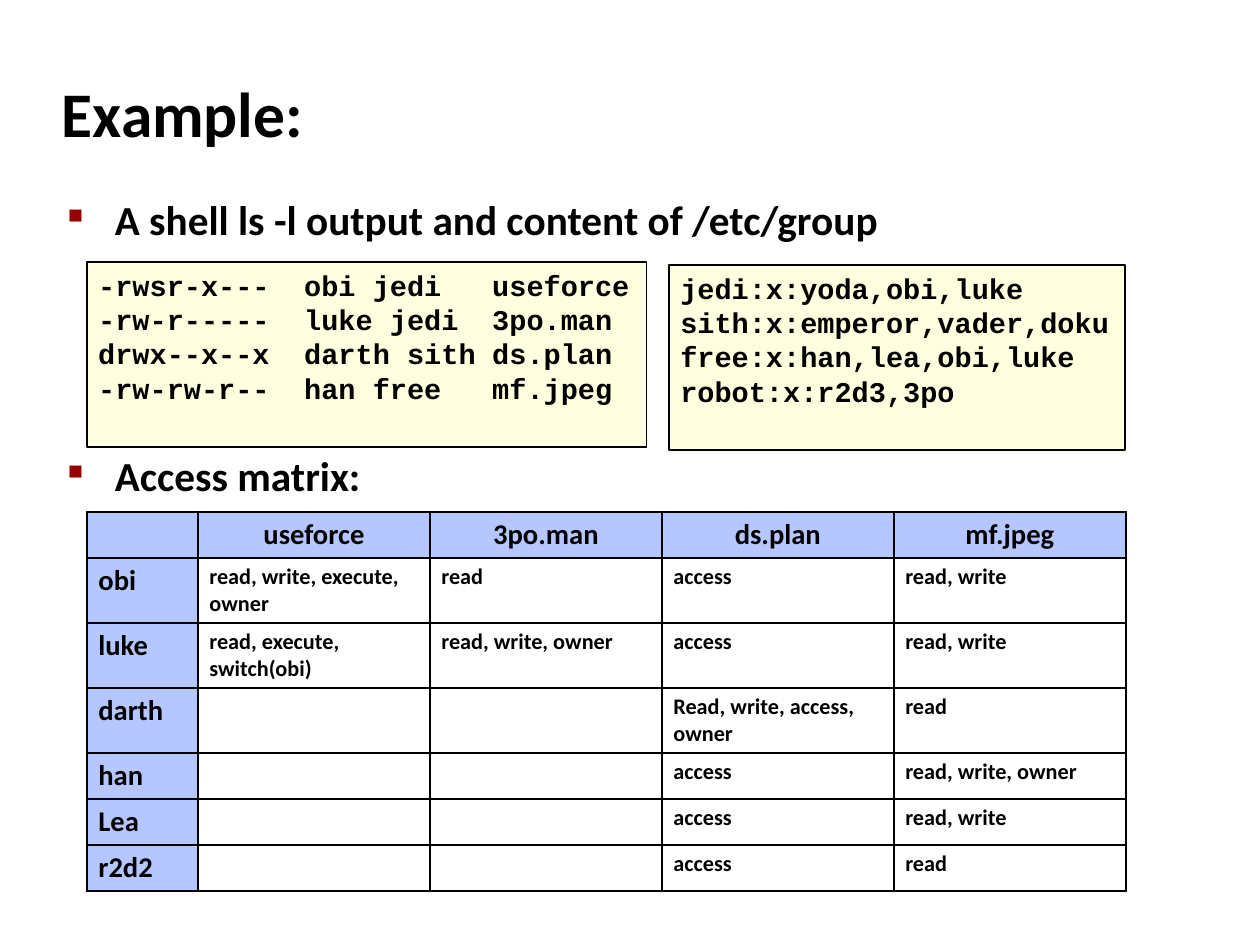
from dataclasses import dataclass

from lxml.etree import SubElement
from pptx import Presentation
from pptx.dml.color import RGBColor as RGB
from pptx.enum.shapes import MSO_SHAPE as Shape
from pptx.enum.text import MSO_ANCHOR as Anchor, PP_ALIGN as Align
from pptx.oxml import parse_xml
from pptx.oxml.ns import nsdecls, qn
from pptx.util import Pt


@dataclass(frozen=True)
class Theme:
    ink: str = "000000"
    paper: str = "FFFFFF"
    code_fill: str = "FEFFDE"
    head_fill: str = "B6C7FF"
    bullet: str = "990000"
    body_font: str = "Calibri"
    code_font: str = "Courier New"
    title_size: int = 40
    body_size: int = 26
    label_size: int = 18
    cell_size: int = 14


THEME = Theme()
EMU_PER_PX = 8000

LISTING = [
    "-rwsr-x---\tobi jedi\tuseforce",
    "-rw-r-----\tluke jedi\t3po.man",
    "drwx--x--x\tdarth sith\tds.plan",
    "-rw-rw-r--\than free\tmf.jpeg",
]
GROUPS = [
    "jedi:x:yoda,obi,luke",
    "sith:x:emperor,vader,doku",
    "free:x:han,lea,obi,luke",
    "robot:x:r2d3,3po",
]
MATRIX = [
    ["", "useforce", "3po.man", "ds.plan", "mf.jpeg"],
    ["obi", "read, write, execute,\vowner", "read", "access", "read, write"],
    ["luke", "read, execute, switch(obi)", "read, write, owner", "access", "read, write"],
    ["darth", "", "", "Read, write, access, owner", "read"],
    ["han", "", "", "access", "read, write, owner"],
    ["Lea", "", "", "access", "read, write"],
    ["r2d2", "", "", "access", "read"],
]


def px(n):
    return n * EMU_PER_PX


def write(tf, lines, size, font=THEME.body_font, align=Align.LEFT, gap=0):
    for i, line in enumerate(lines):
        p = tf.paragraphs[0] if i == 0 else tf.add_paragraph()
        p.text = line
        p.alignment = align
        p.space_before = Pt(gap if i else 0)
        for r in p.runs:
            r.font.name = font
            r.font.size = Pt(size)
            r.font.bold = True
            r.font.color.rgb = RGB.from_string(THEME.ink)


def text_box(s, box, lines, size, anchor=Anchor.TOP, gap=0):
    tf = s.shapes.add_textbox(*map(px, box)).text_frame
    tf.word_wrap = True
    tf.vertical_anchor = anchor
    tf.margin_left = tf.margin_right = px(13)
    tf.margin_top = tf.margin_bottom = px(7)
    write(tf, lines, size, gap=gap)
    return tf


def bullet_list(s, box, lines, gap):
    tf = text_box(s, box, lines, THEME.body_size, gap=gap)
    for p in tf.paragraphs:
        pPr = p._p.get_or_add_pPr()
        pPr.set("marL", str(px(47)))
        pPr.set("indent", str(px(-47)))
        color = SubElement(pPr, qn("a:buClr"))
        SubElement(color, qn("a:srgbClr"), val=THEME.bullet)
        SubElement(pPr, qn("a:buSzPct"), val="50000")
        SubElement(pPr, qn("a:buChar"), char="■")


def code_box(s, box, lines, tabs=()):
    sp = s.shapes.add_shape(Shape.RECTANGLE, *map(px, box))
    sp.shadow.inherit = False
    sp.fill.solid()
    sp.fill.fore_color.rgb = RGB.from_string(THEME.code_fill)
    sp.line.color.rgb = RGB.from_string(THEME.ink)
    sp.line.width = Pt(0.75)
    tf = sp.text_frame
    tf.word_wrap = True
    tf.vertical_anchor = Anchor.TOP
    write(tf, lines, THEME.label_size, THEME.code_font)
    if tabs:
        for p in tf.paragraphs:
            tab_list = SubElement(p._p.get_or_add_pPr(), qn("a:tabLst"))
            for tab in tabs:
                SubElement(tab_list, qn("a:tab"), pos=str(px(tab)), algn="l")


def set_borders(cell):
    tcPr = cell._tc.get_or_add_tcPr()
    for i, side in enumerate("LRTB"):
        tcPr.insert(i, parse_xml(
            f'<a:ln{side} {nsdecls("a")} w="{Pt(1)}"><a:solidFill>'
            f'<a:srgbClr val="{THEME.ink}"/></a:solidFill></a:ln{side}>'))


def access_matrix(s, box, rows, label_width, heights):
    table = s.shapes.add_table(len(rows), len(rows[0]), *map(px, box)).table
    table.first_row = table.horz_banding = False
    access_width = (box[2] - label_width) // (len(rows[0]) - 1)
    for i, column in enumerate(table.columns):
        column.width = px(access_width if i else label_width)
    for row, height in zip(table.rows, heights):
        row.height = px(height)
    for i, values in enumerate(rows):
        for j, value in enumerate(values):
            cell = table.cell(i, j)
            is_label = i == 0 or j == 0
            cell.fill.solid()
            cell.fill.fore_color.rgb = RGB.from_string(
                THEME.head_fill if is_label else THEME.paper)
            set_borders(cell)
            if value:
                write(cell.text_frame, [value],
                      THEME.label_size if is_label else THEME.cell_size,
                      align=Align.LEFT if i else Align.CENTER)


def example_slide(prs):
    s = prs.slides.add_slide(prs.slide_layouts[6])
    text_box(s, (49, 60, 1046, 105), ["Example:"], THEME.title_size, Anchor.MIDDLE)
    bullet_list(s, (55, 187, 1088, 320),
                ["A shell ls -l output and content of /etc/group", "Access matrix:"],
                gap=130)
    code_box(s, (87, 262, 560, 185), LISTING, tabs=(206, 394))
    code_box(s, (669, 265, 456, 185), GROUPS)
    access_matrix(s, (87, 512, 1039, 380), MATRIX, label_width=111,
                  heights=[46, 65, 65, 65, 46, 46, 46])


def main():
    prs = Presentation()
    prs.slide_width, prs.slide_height = px(1260), px(945)
    example_slide(prs)
    prs.save("out.pptx")


if __name__ == "__main__":
    main()
